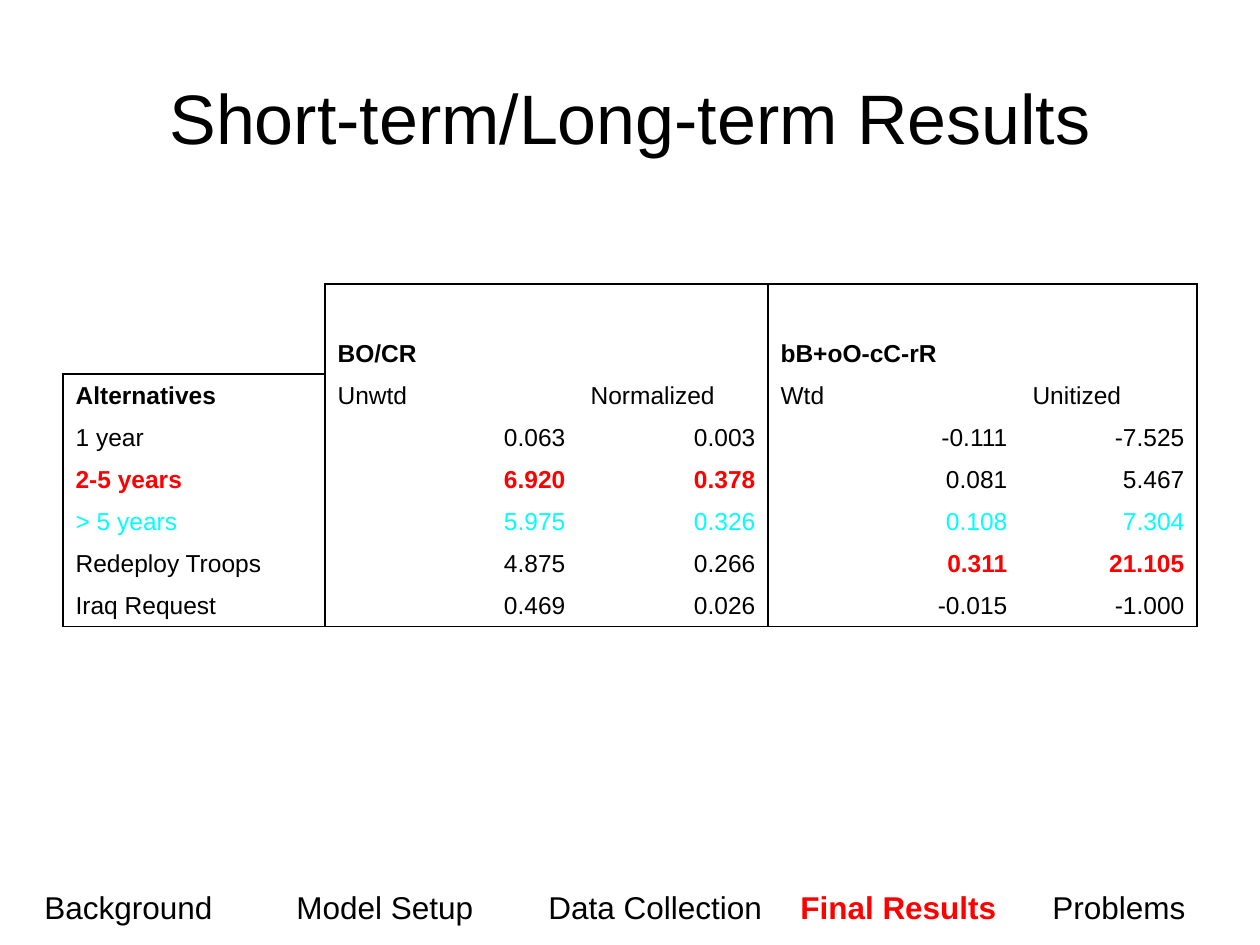
import dataclasses

import lxml.etree
import pptx
import pptx.dml.color
import pptx.enum.text
import pptx.oxml.ns
import pptx.util

TITLE = "Short-term/Long-term Results"
SECTIONS = ["Background", "Model Setup", "Data Collection", "Final Results", "Problems"]
CURRENT_SECTION = "Final Results"

ROWS = [
    ["", "BO/CR", "", "bB+oO-cC-rR", ""],
    ["Alternatives", "Unwtd", "Normalized", "Wtd", "Unitized"],
    ["1 year", "0.063", "0.003", "-0.111", "-7.525"],
    ["2-5 years", "6.920", "0.378", "0.081", "5.467"],
    ["> 5 years", "5.975", "0.326", "0.108", "7.304"],
    ["Redeploy Troops", "4.875", "0.266", "0.311", "21.105"],
    ["Iraq Request", "0.469", "0.026", "-0.015", "-1.000"],
]
BOLD_HEADINGS = {"BO/CR", "bB+oO-cC-rR", "Alternatives"}
BEST = {"2-5 years", "6.920", "0.378", "0.311", "21.105"}
RUNNER_UP_ROW = 4
FIRST_VALUE_ROW = 2
GROUP_ENDS = {0, 2, 4}

SLIDE_SIZE = (1260, 945)
TITLE_BOX = (63, 38, 1134, 158)
NAVIGATION_BOX = (32, 882, 1197, 50)
TAB_STEP = 252
TABLE_LEFT, TABLE_TOP = 63, 284
COLUMN_WIDTHS = [262, 253, 190, 252, 177]
ROW_HEIGHTS = [90] + [42] * (len(ROWS) - 1)


@dataclasses.dataclass(frozen=True)
class Theme:
    font: str = "Arial"
    text: str = "000000"
    best: str = "FF0000"
    runner_up: str = "00FFFF"
    title_size: int = 40
    navigation_size: int = 18
    table_size: int = 14
    border_width: int = 1


THEME = Theme()


def px(length):
    return pptx.util.Emu(round(length * 914400 / 126))


def format_run(run, size, color=THEME.text, bold=False):
    run.font.name = THEME.font
    run.font.size = pptx.util.Pt(size)
    run.font.bold = bold
    run.font.color.rgb = pptx.dml.color.RGBColor.from_string(color)


def add_child(parent, tag, **attributes):
    child = lxml.etree.SubElement(parent, pptx.oxml.ns.qn(tag))
    for name, value in attributes.items():
        child.set(name, str(value))
    return child


def add_text_box(slide, box):
    text_frame = slide.shapes.add_textbox(*map(px, box)).text_frame
    text_frame.word_wrap = True
    return text_frame


def add_title(slide):
    text_frame = add_text_box(slide, TITLE_BOX)
    text_frame.vertical_anchor = pptx.enum.text.MSO_ANCHOR.MIDDLE
    text_frame.text = TITLE
    paragraph = text_frame.paragraphs[0]
    paragraph.alignment = pptx.enum.text.PP_ALIGN.CENTER
    format_run(paragraph.runs[0], THEME.title_size)


def add_navigation(slide):
    paragraph = add_text_box(slide, NAVIGATION_BOX).paragraphs[0]
    tab_list = add_child(paragraph._p.get_or_add_pPr(), "a:tabLst")
    for index, section in enumerate(SECTIONS):
        if index:
            add_child(tab_list, "a:tab", pos=px(index * TAB_STEP), algn="l")
            tab = paragraph.add_run()
            tab.text = "\t"
            format_run(tab, THEME.navigation_size)
        run = paragraph.add_run()
        run.text = section
        current = section == CURRENT_SECTION
        color = THEME.best if current else THEME.text
        format_run(run, THEME.navigation_size, color, current)


def set_borders(cell, row, column):
    """Frame each column group; the corner cell has no outer border."""
    last_row = len(ROWS) - 1
    sides = {
        "a:lnL": column - 1 in GROUP_ENDS or (column == 0 and row > 0),
        "a:lnR": column in GROUP_ENDS,
        "a:lnT": (row == 0 and column > 0) or (row == 1 and column == 0),
        "a:lnB": row == last_row or (row == 0 and column == 0),
    }
    properties = cell._tc.get_or_add_tcPr()
    for tag, visible in sides.items():
        line = add_child(properties, tag, w=pptx.util.Pt(THEME.border_width))
        if visible:
            add_child(add_child(line, "a:solidFill"), "a:srgbClr", val=THEME.text)
        else:
            add_child(line, "a:noFill")


def fill_cell(cell, text, row, column):
    set_borders(cell, row, column)
    cell.fill.background()
    cell.vertical_anchor = pptx.enum.text.MSO_ANCHOR.BOTTOM
    if not text:
        return
    cell.text_frame.text = text
    paragraph = cell.text_frame.paragraphs[0]
    if row >= FIRST_VALUE_ROW and column > 0:
        paragraph.alignment = pptx.enum.text.PP_ALIGN.RIGHT
    color = THEME.text
    if text in BEST:
        color = THEME.best
    elif row == RUNNER_UP_ROW:
        color = THEME.runner_up
    bold = text in BEST or text in BOLD_HEADINGS
    format_run(paragraph.runs[0], THEME.table_size, color, bold)


def add_results_table(slide):
    table = slide.shapes.add_table(
        len(ROWS), len(COLUMN_WIDTHS), px(TABLE_LEFT), px(TABLE_TOP),
        px(sum(COLUMN_WIDTHS)), px(sum(ROW_HEIGHTS)),
    ).table
    table.first_row = False
    table.horz_banding = False
    for column, width in zip(table.columns, COLUMN_WIDTHS):
        column.width = px(width)
    for row, height in zip(table.rows, ROW_HEIGHTS):
        row.height = px(height)
    for row, texts in enumerate(ROWS):
        for column, text in enumerate(texts):
            fill_cell(table.cell(row, column), text, row, column)


def main():
    presentation = pptx.Presentation()
    presentation.slide_width, presentation.slide_height = map(px, SLIDE_SIZE)
    slide = presentation.slides.add_slide(presentation.slide_layouts[6])
    add_title(slide)
    add_navigation(slide)
    add_results_table(slide)
    presentation.save("out.pptx")


if __name__ == "__main__":
    main()
